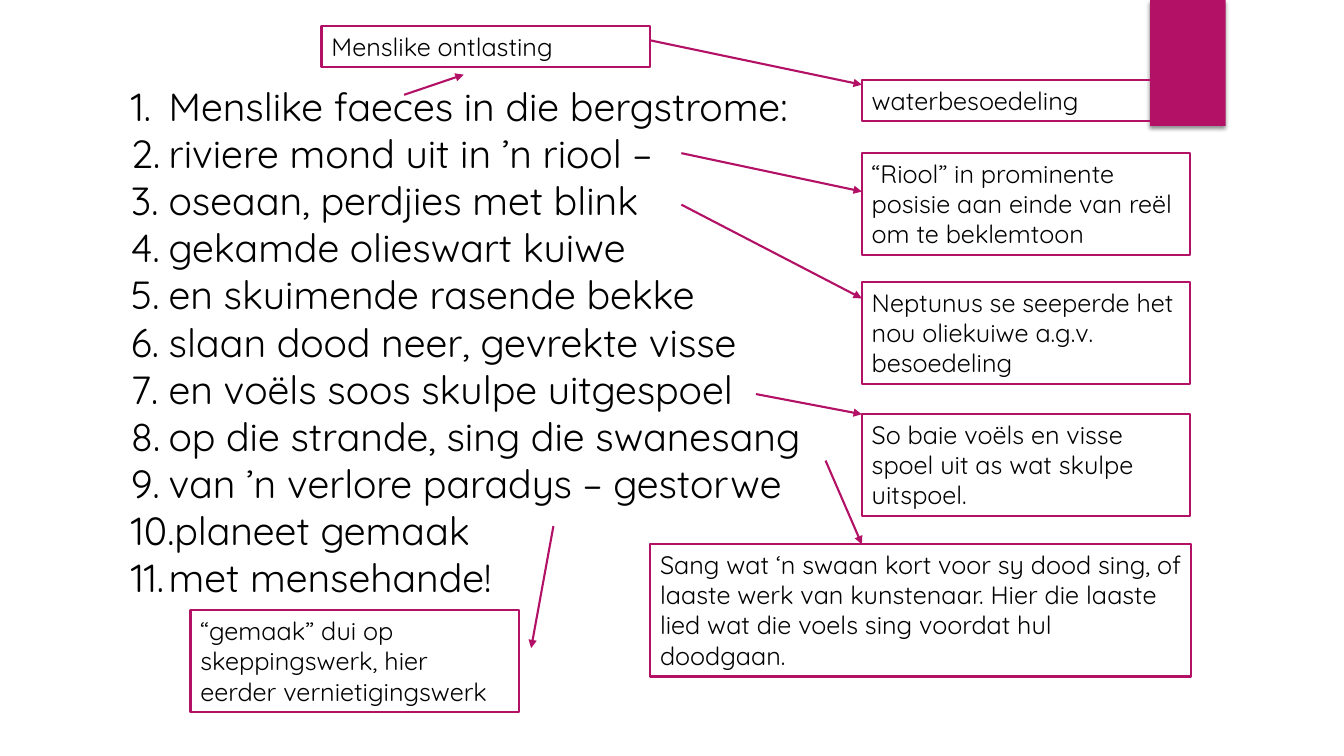
from lxml import etree
from pptx import Presentation
from pptx.dml.color import RGBColor
from pptx.enum.shapes import MSO_CONNECTOR, MSO_SHAPE
from pptx.enum.text import MSO_ANCHOR, MSO_AUTO_SIZE, PP_ALIGN
from pptx.oxml.ns import qn
from pptx.util import Pt

RECTANGLE = MSO_SHAPE.RECTANGLE
STRAIGHT = MSO_CONNECTOR.STRAIGHT
LEFT = PP_ALIGN.LEFT

MAGENTA = RGBColor(0xB3, 0x11, 0x66)
BLACK = RGBColor(0, 0, 0)

FRAME_FORMAT = {
    "word_wrap": True,
    "auto_size": MSO_AUTO_SIZE.SHAPE_TO_FIT_TEXT,
    "vertical_anchor": MSO_ANCHOR.TOP,
}
POEM_FONT = {"name": "Quicksand", "size": Pt(28)}
NOTE_FONT = {"name": "Quicksand", "size": Pt(18)}

HANGING = Pt(27)
NOTE_WIDTH = 234.7
COLUMN_LEFT = 615.6

POEM = [
    "Menslike faeces in die bergstrome:",
    "riviere mond uit in ’n riool –",
    "oseaan, perdjies met blink",
    "gekamde olieswart kuiwe",
    "en skuimende rasende bekke",
    "slaan dood neer, gevrekte visse",
    "en voëls soos skulpe uitgespoel",
    "op die strande, sing die swanesang",
    "van ’n verlore paradys – gestorwe",
    "planeet gemaak",
    "met mensehande!",
]

NOTES = [
    (229.7, 18.7, NOTE_WIDTH, 29.1, "Menslike ontlasting"),
    (COLUMN_LEFT, 109.4, NOTE_WIDTH, 72.7,
     "“Riool” in prominente posisie aan einde van reël om te beklemtoon"),
    (COLUMN_LEFT, 201.6, NOTE_WIDTH, 72.7,
     "Neptunus se seeperde het nou oliekuiwe a.g.v. besoedeling"),
    (COLUMN_LEFT, 295.9, NOTE_WIDTH, 72.7,
     "So baie voëls en visse spoel uit as wat skulpe uitspoel."),
    (464.4, 388.8, 386.6, 94.5,
     "Sang wat ‘n swaan kort voor sy dood sing, of laaste werk van kunstenaar. "
     "Hier die laaste lied wat die voels sing voordat hul doodgaan."),
    (COLUMN_LEFT, 57.1, NOTE_WIDTH, 29.1, "waterbesoedeling"),
    (136.1, 436, NOTE_WIDTH, 72.7,
     "“gemaak” dui op skeppingswerk, hier eerder vernietigingswerk"),
]

ARROWS = [
    (288.7, 67.7, 331.2, 53.3),
    (464.4, 28.8, COLUMN_LEFT, 60.5),
    (486.7, 109.4, COLUMN_LEFT, 136.8),
    (486.7, 146.2, COLUMN_LEFT, 213.1),
    (540, 281.5, COLUMN_LEFT, 295.9),
    (589.7, 329, COLUMN_LEFT, 388.8),
    (395.3, 375.8, 379.4, 463),
]


def apply(target, values):
    for key, value in values.items():
        setattr(target, key, value)


def write(paragraph, text, font):
    paragraph.alignment = LEFT
    run = paragraph.add_run()
    run.text = text
    apply(run.font, font)
    run.font.color.rgb = BLACK


def add_banner(slide):
    banner = slide.shapes.add_shape(RECTANGLE, Pt(821.5), 0, Pt(54), Pt(90))
    banner.fill.solid()
    banner.fill.fore_color.rgb = MAGENTA
    banner.line.fill.background()
    effects = etree.SubElement(banner._element.spPr, qn("a:effectLst"))
    shadow = etree.SubElement(
        effects, qn("a:outerShdw"), blurRad=str(Pt(3)), dist=str(Pt(2)),
        dir="5400000", algn="ctr", rotWithShape="0")
    tint = etree.SubElement(shadow, qn("a:srgbClr"), val=str(BLACK))
    etree.SubElement(tint, qn("a:alpha"), val="45000")


def add_poem(slide):
    poem = slide.shapes.add_textbox(Pt(86.4), Pt(55.4), Pt(543.6), Pt(380.2))
    frame = poem.text_frame
    apply(frame, FRAME_FORMAT)
    for index, verse in enumerate(POEM):
        paragraph = frame.add_paragraph() if index else frame.paragraphs[0]
        properties = paragraph._p.get_or_add_pPr()
        properties.set("marL", str(HANGING))
        properties.set("indent", str(-HANGING))
        etree.SubElement(properties, qn("a:buFont"), typeface="+mj-lt")
        etree.SubElement(properties, qn("a:buAutoNum"), type="arabicPeriod")
        write(paragraph, verse, POEM_FONT)


def add_note(slide, left, top, width, height, text):
    note = slide.shapes.add_shape(
        RECTANGLE, Pt(left), Pt(top), Pt(width), Pt(height))
    note.shadow.inherit = False
    note.fill.background()
    note.line.color.rgb = MAGENTA
    note.line.width = Pt(1.5)
    apply(note.text_frame, FRAME_FORMAT)
    write(note.text_frame.paragraphs[0], text, NOTE_FONT)


def add_arrow(slide, *ends):
    arrow = slide.shapes.add_connector(STRAIGHT, *[Pt(end) for end in ends])
    arrow.line.color.rgb = MAGENTA
    arrow.line.width = Pt(1.5)
    etree.SubElement(arrow.line._get_or_add_ln(), qn("a:tailEnd"), type="triangle")
    etree.SubElement(arrow._element.spPr, qn("a:effectLst"))


def main():
    presentation = Presentation()
    presentation.slide_width = Pt(960)
    presentation.slide_height = Pt(540)
    slide = presentation.slides.add_slide(presentation.slide_layouts[6])
    add_banner(slide)
    add_poem(slide)
    for note in NOTES:
        add_note(slide, *note)
    for arrow in ARROWS:
        add_arrow(slide, *arrow)
    presentation.save("out.pptx")


if __name__ == "__main__":
    main()
